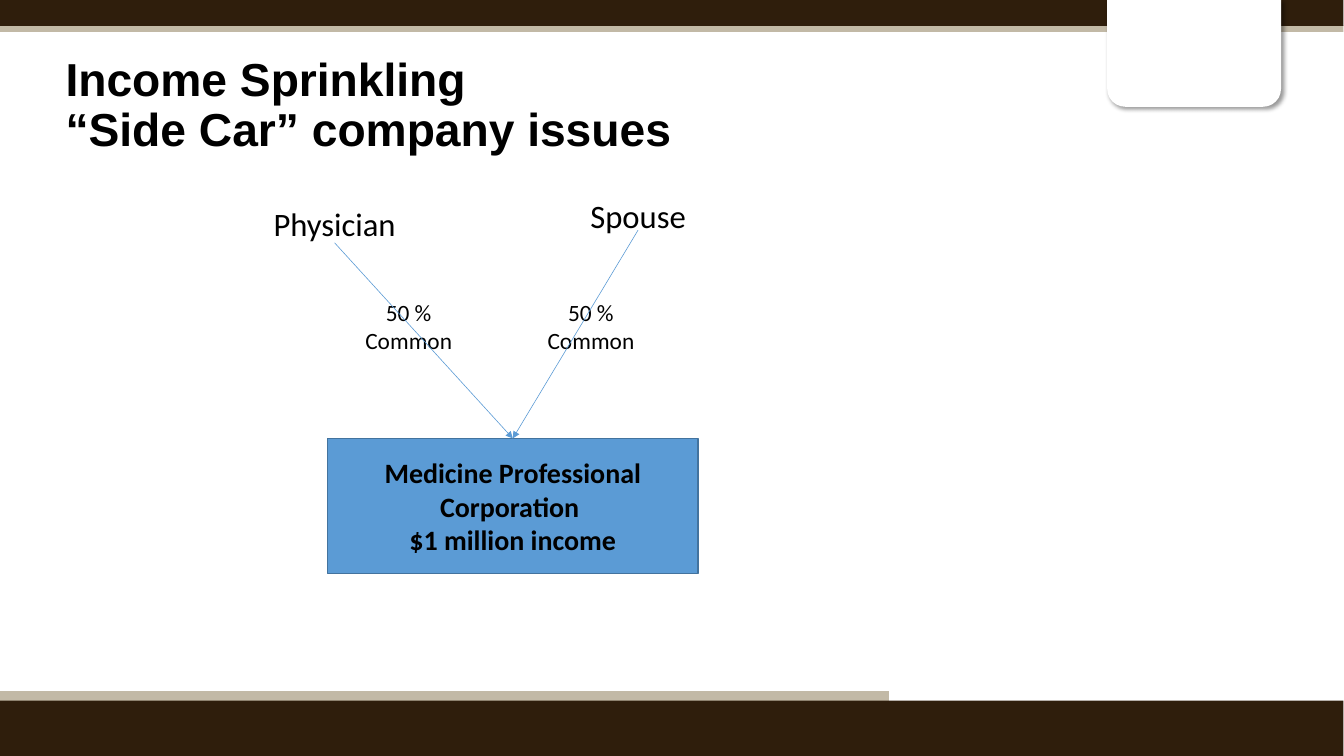
"""Build the income sprinkling slide with its ownership diagram."""
from pptx import Presentation
from pptx.dml.color import RGBColor
from pptx.enum.shapes import MSO_CONNECTOR, MSO_SHAPE
from pptx.enum.text import MSO_ANCHOR, MSO_AUTO_SIZE, PP_ALIGN
from pptx.oxml import parse_xml
from pptx.oxml.ns import nsdecls, qn
from pptx.util import Pt

RECTANGLE = MSO_SHAPE.RECTANGLE
TAB = MSO_SHAPE.ROUND_2_SAME_RECTANGLE
STRAIGHT = MSO_CONNECTOR.STRAIGHT
MIDDLE = MSO_ANCHOR.MIDDLE
CENTER, LEFT = PP_ALIGN.CENTER, PP_ALIGN.LEFT
TOP_SITE, BOTTOM_SITE = 0, 2

BROWN, TAN, WHITE, BLACK = "2F1E0C", "C2B9A6", "FFFFFF", "000000"
BLUE, DARK_BLUE = "5B9BD5", "43739E"
SLIDE_SIZE = (1152, 648)
BANDS = [
    ((-0.5, 21.6, 1152, 5.8), TAN),
    ((-0.5, 0, 1152, 22.3), BROWN),
    ((-0.5, 592.5, 762.5, 12.3), TAN),
    ((-0.5, 600.5, 1152, 48), BROWN),
]
TAB_BOX = (949, -0.5, 149, 92)
TITLE = "Income Sprinkling\v“Side Car” company issues"
TITLE_BOX = (49, 48.2, 905, 86.4)
OWNERS = [
    ("Physician", (213, 175.7, 147.6, 32.4)),
    ("Spouse", (487.5, 172.8, 118.8, 24.5)),
]
SHARE = "50 % Common"
SHARE_BOXES = [(left, 267.1, 118.8, 24.5) for left in (290.9, 447.1)]
COMPANY = "Medicine Professional Corporation \n$1 million income"
COMPANY_BOX = (280.8, 375.8, 317.5, 115.9)


def color(value):
    return RGBColor.from_string(value)


def points(box):
    return [Pt(value) for value in box]


def write(shape, text, size, font="Calibri", bold=False, align=CENTER):
    frame = shape.text_frame
    frame.text = text
    frame.word_wrap = True
    frame.auto_size = MSO_AUTO_SIZE.NONE
    frame.vertical_anchor = MIDDLE
    for paragraph in frame.paragraphs:
        paragraph.alignment = align
        for run in paragraph.runs:
            run.font.name = font
            run.font.size = Pt(size)
            run.font.bold = bold
            run.font.color.rgb = color(BLACK)


def add_block(slide, kind, box, fill, outline=None):
    shape = slide.shapes.add_shape(kind, *points(box))
    shape.fill.solid()
    shape.fill.fore_color.rgb = color(fill)
    if outline:
        shape.line.color.rgb = color(outline)
        shape.line.width = Pt(1)
    else:
        shape.line.fill.background()
    shape.shadow.inherit = False
    return shape


def add_label(slide, text, box, size):
    label = slide.shapes.add_textbox(*points(box))
    write(label, text, size)
    return label


def add_tab(slide):
    tab = add_block(slide, TAB, TAB_BOX, WHITE)
    tab.rotation = 180
    tab.element.spPr.find(qn("a:effectLst")).append(parse_xml(
        f'<a:outerShdw {nsdecls("a")} blurRad="{Pt(4)}" dist="{Pt(3)}" '
        f'dir="2700000" algn="tl" rotWithShape="0"><a:srgbClr val="{BLACK}">'
        '<a:alpha val="40000"/></a:srgbClr></a:outerShdw>'))


def add_arrow(slide, owner, company):
    arrow = slide.shapes.add_connector(STRAIGHT, 0, 0, 0, 0)
    arrow.begin_connect(owner, BOTTOM_SITE)
    arrow.end_connect(company, TOP_SITE)
    arrow.line.color.rgb = color(BLUE)
    arrow.line.width = Pt(0.5)
    properties = arrow.element.spPr
    properties.find(qn("a:ln")).append(
        parse_xml(f'<a:tailEnd {nsdecls("a")} type="triangle"/>'))
    properties.append(parse_xml(f'<a:effectLst {nsdecls("a")}/>'))


def main():
    presentation = Presentation()
    presentation.slide_width, presentation.slide_height = points(SLIDE_SIZE)
    slide = presentation.slides.add_slide(presentation.slide_layouts[5])

    for box, fill in BANDS:
        add_block(slide, RECTANGLE, box, fill)
    add_tab(slide)

    title = slide.shapes.title
    title.left, title.top, title.width, title.height = points(TITLE_BOX)
    write(title, TITLE, 39.6, "Arial", True, LEFT)
    title.text_frame.paragraphs[0].line_spacing = 0.9

    owners = [add_label(slide, text, box, 28) for text, box in OWNERS]
    for box in SHARE_BOXES:
        add_label(slide, SHARE, box, 20)
    company = add_block(slide, RECTANGLE, COMPANY_BOX, BLUE, DARK_BLUE)
    write(company, COMPANY, 24, bold=True)
    for owner in owners:
        add_arrow(slide, owner, company)

    presentation.save("out.pptx")


if __name__ == "__main__":
    main()
